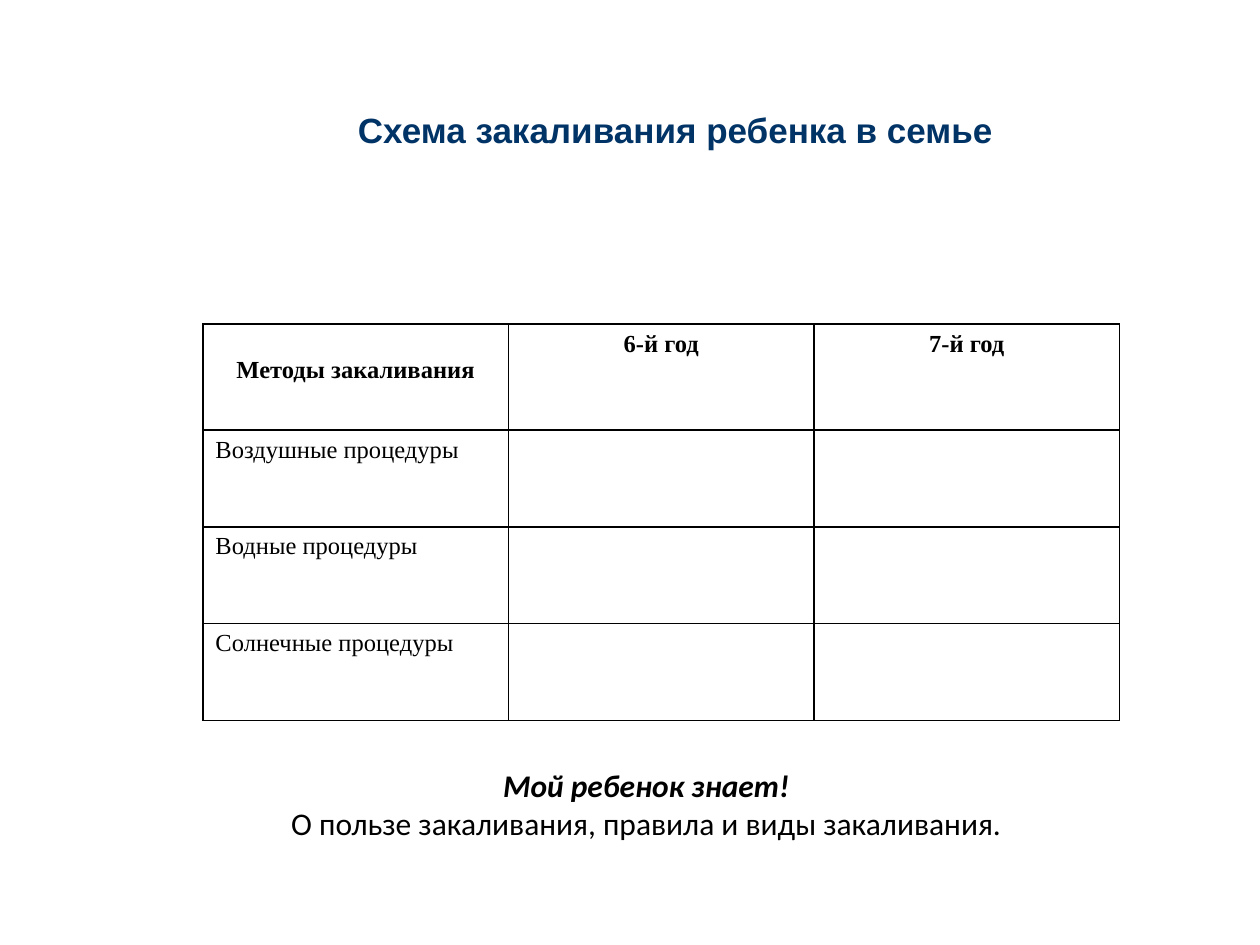
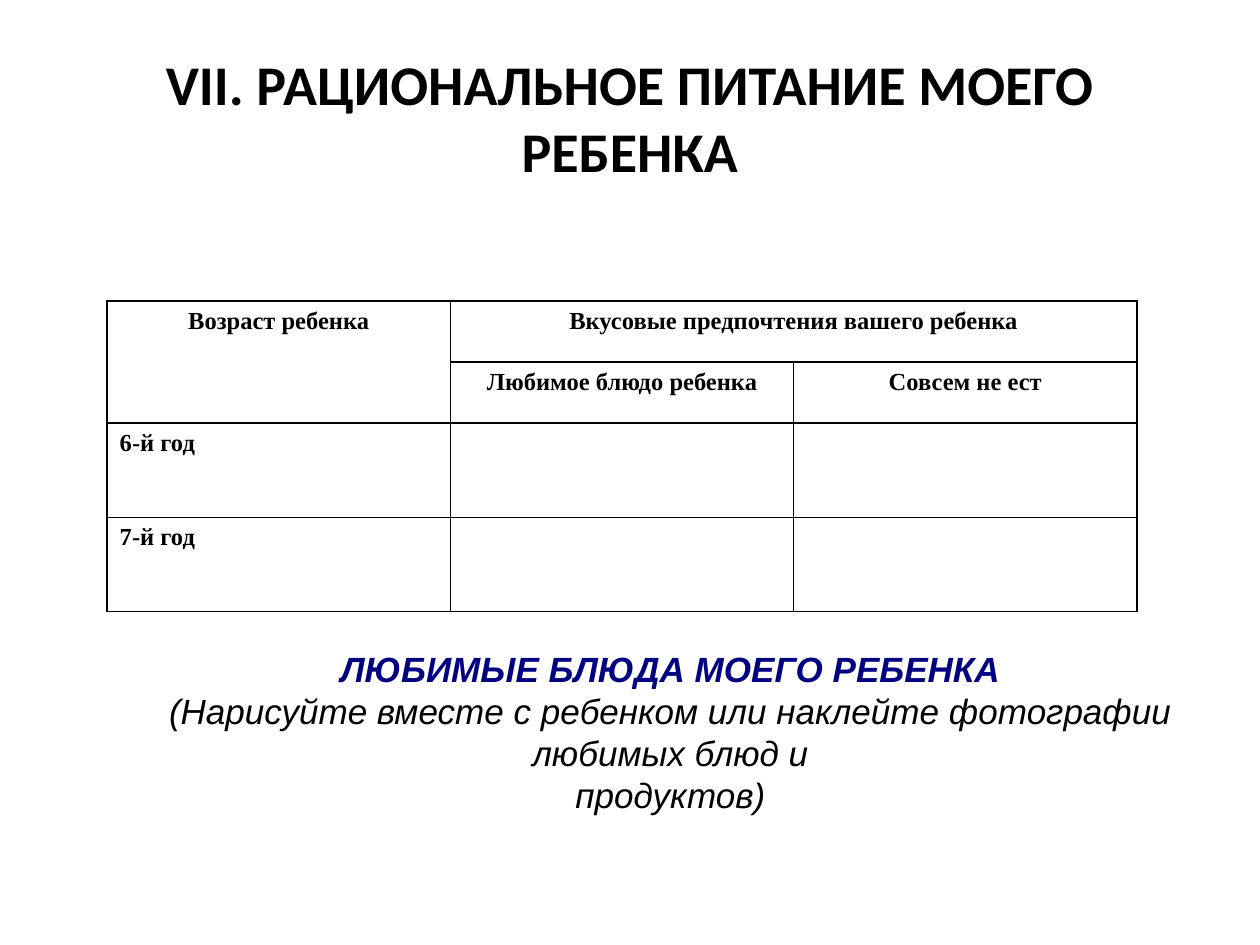
"""Build two slides on hardening and nutrition from a family health diary."""
from dataclasses import dataclass, field

from lxml.etree import SubElement
from pptx import Presentation
from pptx.dml.color import RGBColor
from pptx.enum.text import MSO_ANCHOR, PP_ALIGN
from pptx.oxml.ns import qn
from pptx.slide import Slide
from pptx.table import _Cell
from pptx.util import Cm, Pt

COLORS = {"ink": "000000", "heading": "003366", "dishes": "000080"}
BORDER_SIDES = ("a:lnL", "a:lnR", "a:lnT", "a:lnB")


@dataclass(frozen=True)
class Style:
    font: str
    size: int
    color: str = "ink"
    bold: bool = False
    italic: bool = False


@dataclass(frozen=True)
class Line:
    text: str
    style: Style


@dataclass(frozen=True)
class Caption:
    left: float
    top: float
    width: float
    height: float
    lines: list[Line]
    wrap: bool = False
    side_inset: float = 0.25


@dataclass(frozen=True)
class Grid:
    left: float
    top: float
    column_width: float
    row_heights: list[float]
    rows: list[list[str]]
    header_rows: int = 1
    bold_body: bool = False
    merges: list[tuple[int, int, int, int]] = field(default_factory=list)
    top_insets: dict[tuple[int, int], float] = field(default_factory=dict)


def add_line(paragraph, line: Line, align: PP_ALIGN) -> None:
    """Write one styled run into a paragraph."""
    paragraph.alignment = align
    run = paragraph.add_run()
    run.text = line.text
    font = run.font
    font.name = line.style.font
    font.size = Pt(line.style.size)
    font.bold = line.style.bold
    font.italic = line.style.italic
    font.color.rgb = RGBColor.from_string(COLORS[line.style.color])


def add_caption(slide: Slide, caption: Caption) -> None:
    """Draw a centred text block."""
    box = slide.shapes.add_textbox(
        Cm(caption.left), Cm(caption.top), Cm(caption.width), Cm(caption.height)
    )
    frame = box.text_frame
    frame.word_wrap = caption.wrap
    frame.vertical_anchor = MSO_ANCHOR.MIDDLE
    frame.margin_left = frame.margin_right = Cm(caption.side_inset)
    for index, line in enumerate(caption.lines):
        paragraph = frame.add_paragraph() if index else frame.paragraphs[0]
        add_line(paragraph, line, PP_ALIGN.CENTER)


def outline_cell(cell: _Cell) -> None:
    """Give a cell thin borders and no fill."""
    properties = cell._tc.get_or_add_tcPr()
    for side in BORDER_SIDES:
        border = SubElement(properties, qn(side), w=str(Pt(1)))
        fill = SubElement(border, qn("a:solidFill"))
        SubElement(fill, qn("a:srgbClr"), val=COLORS["ink"])
    cell.fill.background()


def add_grid(slide: Slide, grid: Grid) -> None:
    """Draw a bordered table with centred headers."""
    columns = len(grid.rows[0])
    table = slide.shapes.add_table(
        len(grid.rows), columns, Cm(grid.left), Cm(grid.top),
        Cm(grid.column_width * columns), Cm(sum(grid.row_heights)),
    ).table
    table.first_row = table.horz_banding = False
    for column in table.columns:
        column.width = Cm(grid.column_width)
    for row, height in zip(table.rows, grid.row_heights):
        row.height = Cm(height)
    for top, left, bottom, right in grid.merges:
        table.cell(top, left).merge(table.cell(bottom, right))
    for row_index, texts in enumerate(grid.rows):
        is_header = row_index < grid.header_rows
        style = Style("Times New Roman", 14, bold=is_header or grid.bold_body)
        align = PP_ALIGN.CENTER if is_header else PP_ALIGN.LEFT
        for column_index, text in enumerate(texts):
            cell = table.cell(row_index, column_index)
            outline_cell(cell)
            if text:
                add_line(cell.text_frame.paragraphs[0], Line(text, style), align)
    for (row_index, column_index), inset in grid.top_insets.items():
        table.cell(row_index, column_index).margin_top = Cm(inset)


HARDENING_TITLE = Caption(6.91, 2.06, 13.41, 1.09, [
    Line("Схема закаливания ребенка в семье", Style("Arial", 20, "heading", bold=True)),
])
HARDENING_METHODS = Grid(
    4.09, 6.53, 6.16, [2.14, 1.95, 1.95, 1.95],
    [
        ["Методы закаливания", "6-й год", "7-й год"],
        ["Воздушные процедуры", "", ""],
        ["Водные процедуры", "", ""],
        ["Солнечные процедуры", "", ""],
    ],
    top_insets={(0, 0): 0.67},
)
CHILD_KNOWS = Caption(4.7, 15.32, 16.66, 1.78, [
    Line("Мой ребенок знает!", Style("Calibri", 18, bold=True, italic=True)),
    Line("О пользе закаливания, правила и виды закаливания.", Style("Calibri", 18)),
])

NUTRITION_TITLE = Caption(1.27, 0.76, 22.86, 3.18, [
    Line("VII. РАЦИОНАЛЬНОЕ ПИТАНИЕ МОЕГО РЕБЕНКА", Style("Calibri", 32, bold=True)),
], wrap=True)
TASTE_PREFERENCES = Grid(
    2.16, 6.07, 6.92, [1.23, 1.23, 1.9, 1.9],
    [
        ["Возраст ребенка", "Вкусовые предпочтения вашего ребенка", ""],
        ["", "Любимое блюдо ребенка", "Совсем не ест"],
        ["6-й год", "", ""],
        ["7-й год", "", ""],
    ],
    header_rows=2,
    bold_body=True,
    merges=[(0, 0, 1, 0), (0, 1, 0, 2)],
)
DRAWING_TASK = Style("Arial", 20, italic=True)
FAVOURITE_DISHES = Caption(1.63, 13.34, 23.77, 2.8, [
    Line("ЛЮБИМЫЕ БЛЮДА МОЕГО РЕБЕНКА",
         Style("Arial", 20, "dishes", bold=True, italic=True)),
    Line("(Нарисуйте вместе с ребенком или наклейте фотографии любимых блюд и",
         DRAWING_TASK),
    Line("продуктов)", DRAWING_TASK),
], wrap=True, side_inset=0.8)

PAGES = [
    (HARDENING_TITLE, HARDENING_METHODS, CHILD_KNOWS),
    (NUTRITION_TITLE, TASTE_PREFERENCES, FAVOURITE_DISHES),
]


def main() -> None:
    """Assemble the slides and save the file."""
    deck = Presentation()
    deck.slide_width, deck.slide_height = Cm(25.4), Cm(19.05)
    for title, grid, closing in PAGES:
        slide = deck.slides.add_slide(deck.slide_layouts[6])
        add_caption(slide, title)
        add_grid(slide, grid)
        add_caption(slide, closing)
    deck.save("out.pptx")


if __name__ == "__main__":
    main()
